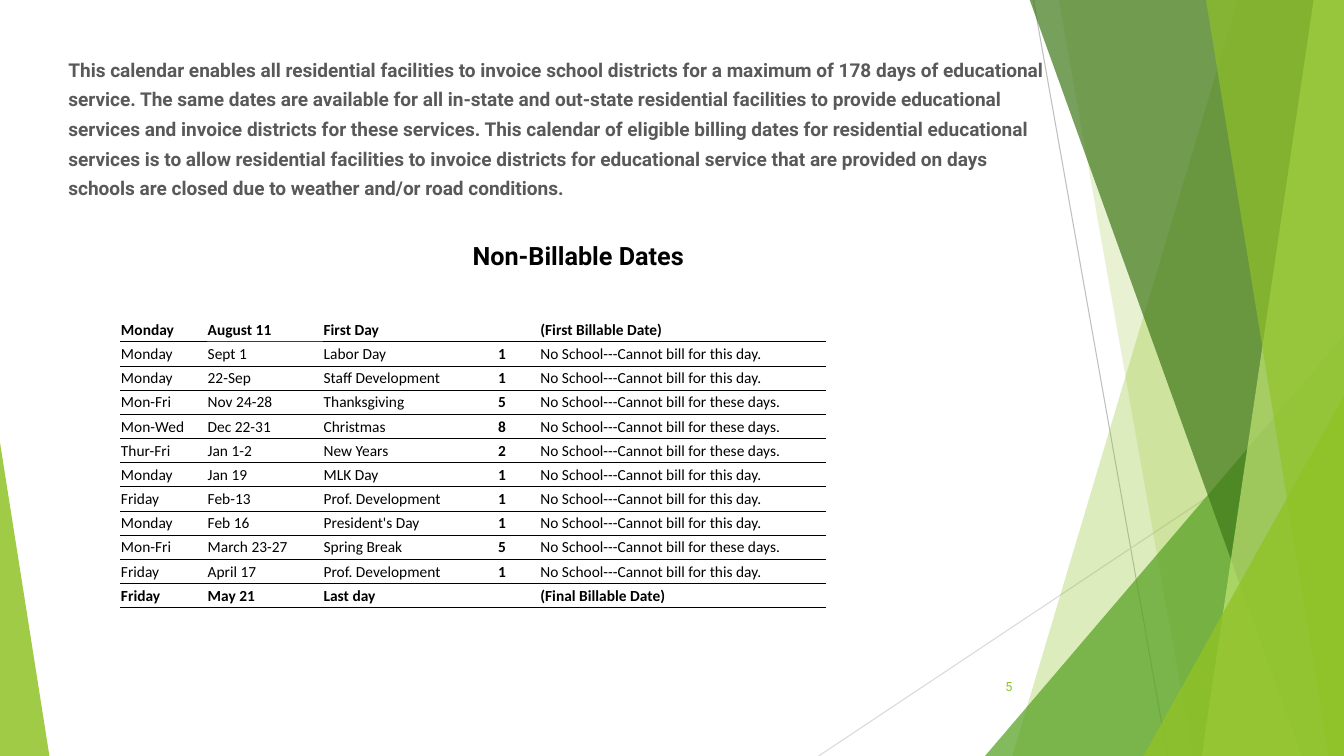
from lxml import etree
from pptx import Presentation
from pptx.dml.color import RGBColor
from pptx.enum.shapes import MSO_CONNECTOR, MSO_SHAPE
from pptx.enum.text import MSO_ANCHOR, PP_ALIGN
from pptx.oxml.ns import qn
from pptx.util import Inches, Pt

STRAIGHT = MSO_CONNECTOR.STRAIGHT
TRIANGLE = MSO_SHAPE.ISOSCELES_TRIANGLE
TOP, MIDDLE = MSO_ANCHOR.TOP, MSO_ANCHOR.MIDDLE
LEFT, CENTER, RIGHT = PP_ALIGN.LEFT, PP_ALIGN.CENTER, PP_ALIGN.RIGHT

BLACK = RGBColor(0x00, 0x00, 0x00)
WHITE = RGBColor(0xFF, 0xFF, 0xFF)
GRAY = RGBColor(0x59, 0x59, 0x59)
LINE_GRAY = RGBColor(0xBF, 0xBF, 0xBF)
PALE_GRAY = RGBColor(0xD9, 0xD9, 0xD9)
LIME = RGBColor(0x90, 0xC2, 0x26)
PALE_LIME = RGBColor(0xC0, 0xE4, 0x74)
GREEN = RGBColor(0x54, 0xA0, 0x21)
DARK_GREEN = RGBColor(0x3F, 0x78, 0x19)
VIOLET = RGBColor(0x66, 0x00, 0xFF)

SLIDE_WIDTH, SLIDE_HEIGHT = 13.33, 7.5
PANEL_TOP = -0.01


def write_text(text_frame, text, alignment, size, font_name, color, bold):
    paragraph = text_frame.paragraphs[0]
    paragraph.alignment = alignment
    run = paragraph.add_run()
    run.text = text
    font_format = {"size": Pt(size), "name": font_name, "bold": bold}
    for name, value in font_format.items():
        setattr(run.font, name, value)
    run.font.color.rgb = color
    return paragraph


def add_border(cell, side, color):
    properties = cell._tc.get_or_add_tcPr()
    line = etree.SubElement(properties, qn(f"a:{side}"), w=str(Pt(0.5)))
    if color is None:
        etree.SubElement(line, qn("a:noFill"))
    else:
        fill = etree.SubElement(line, qn("a:solidFill"))
        etree.SubElement(fill, qn("a:srgbClr"), val=str(color))


presentation = Presentation()
presentation.slide_width = Inches(SLIDE_WIDTH)
presentation.slide_height = Inches(SLIDE_HEIGHT)
slide = presentation.slides.add_slide(presentation.slide_layouts[6])
shapes = slide.shapes

thin_lines = [
    ((10.25, 0, 11.58, SLIDE_HEIGHT), LINE_GRAY),
    ((SLIDE_WIDTH, 4.03, 8.12, SLIDE_HEIGHT), PALE_GRAY),
]
for ends, color in thin_lines:
    connector = shapes.add_connector(STRAIGHT, *[Inches(end) for end in ends])
    connector.line.color.rgb = color
    connector.line.width = Pt(0.75)
    etree.SubElement(connector._element.spPr, qn("a:effectLst"))

# Two numbers: top and bottom of a panel's left edge. Four: a triangle's box.
panels = [
    ((12.28, 10.04), LIME, 30),
    ((10.5, 11.83), LIME, 20),
    ((9.77, 3.33, 3.56, 4.17), GREEN, 72),
    ((10.21, 12.91), DARK_GREEN, 70),
    ((13.03, 11.92), PALE_LIME, 70),
    ((11.96, 13.18), LIME, 65),
    ((11.34, 3.93, 1.99, 3.57), LIME, 80),
    ((0, 4.39, 0.49, 3.11), LIME, 85),
]
for place, color, opacity in panels:
    if len(place) == 2:
        top_left, bottom_left = place
        corners = [
            (SLIDE_WIDTH, PANEL_TOP),
            (SLIDE_WIDTH, SLIDE_HEIGHT),
            (bottom_left, SLIDE_HEIGHT),
        ]
        builder = shapes.build_freeform(Inches(top_left), Inches(PANEL_TOP))
        builder.add_line_segments([(Inches(x), Inches(y)) for x, y in corners])
        panel = builder.convert_to_shape()
    else:
        panel = shapes.add_shape(TRIANGLE, *[Inches(value) for value in place])
        panel.adjustments[0] = 0 if place[0] == 0 else 1
    panel.shadow.inherit = False
    panel.fill.solid()
    panel.fill.fore_color.rgb = color
    panel.line.fill.background()
    color_element = panel._element.spPr.find(qn("a:solidFill"))[0]
    etree.SubElement(color_element, qn("a:alpha"), val=str(opacity * 1000))

introduction = (
    "This calendar enables all residential facilities to invoice school districts "
    "for a maximum of 178 days of educational service. The same dates are available "
    "for all in-state and out-state residential facilities to provide educational "
    "services and invoice districts for these services. This calendar of eligible "
    "billing dates for residential educational services is to allow residential "
    "facilities to invoice districts for educational service that are provided on "
    "days schools are closed due to weather and/or road conditions."
)
text_boxes = [
    ((9.39, 6.61, 0.75, 0.4), "5", MIDDLE, RIGHT, 9, LIME, False, {}),
    ((0.58, 0.46, 10.01, 1.7), introduction, TOP, LEFT, 13.6, GRAY, True,
     {"line_spacing": 1.3, "space_before": Pt(12)}),
    ((2.01, 2.33, 7.45, 0.4), "Non-Billable Dates", MIDDLE, CENTER, 18, BLACK, True, {}),
]
for place, text, anchor, alignment, size, color, bold, spacing in text_boxes:
    text_box = shapes.add_textbox(*[Inches(value) for value in place])
    text_box.text_frame.word_wrap = True
    text_box.text_frame.vertical_anchor = anchor
    paragraph = write_text(text_box.text_frame, text, alignment, size, "Roboto", color, bold)
    for name, value in spacing.items():
        setattr(paragraph, name, value)

ONE_DAY = "No School---Cannot bill for this day."
MORE_DAYS = "No School---Cannot bill for these days."
calendar_rows = [
    ("", "", "", "", ""),
    ("Monday", "August 11", "First Day", "", "(First Billable Date)"),
    ("Monday", "Sept 1", "Labor Day", "1", ONE_DAY),
    ("Monday", "22-Sep", "Staff Development", "1", ONE_DAY),
    ("Mon-Fri", "Nov 24-28", "Thanksgiving", "5", MORE_DAYS),
    ("Mon-Wed", "Dec 22-31", "Christmas", "8", MORE_DAYS),
    ("Thur-Fri", "Jan 1-2", "New Years", "2", MORE_DAYS),
    ("Monday", "Jan 19", "MLK Day", "1", ONE_DAY),
    ("Friday", "Feb-13", "Prof. Development", "1", ONE_DAY),
    ("Monday", "Feb 16", "President's Day", "1", ONE_DAY),
    ("Mon-Fri", "March 23-27", "Spring Break", "5", MORE_DAYS),
    ("Friday", "April 17", "Prof. Development", "1", ONE_DAY),
    ("Friday", "May 21", "Last day", "", "(Final Billable Date)"),
]
column_widths = [0.86, 1.15, 1.41, 0.74, 1.23, 1.61, 1.49]
COUNT_COLUMN, NOTE_COLUMN, LAST_COLUMN = 3, 4, 6
FIRST_DAY, LAST_DAY = 1, len(calendar_rows) - 1
cell_format = {
    "margin_left": Inches(0.01),
    "margin_right": Inches(0.01),
    "margin_top": Inches(0.01),
    "margin_bottom": 0,
    "vertical_anchor": MIDDLE,
}

table = shapes.add_table(
    len(calendar_rows), len(column_widths),
    Inches(1.19), Inches(2.91), Inches(8.5), Inches(3.12),
).table
table.first_row = False
table.horz_banding = False
for column, width in zip(table.columns, column_widths):
    column.width = Inches(width)

for row_index, texts in enumerate(calendar_rows):
    table.rows[row_index].height = Inches(0.24)
    is_closed_day = FIRST_DAY < row_index < LAST_DAY
    for column_index in range(len(column_widths)):
        cell = table.cell(row_index, column_index)
        for name, value in cell_format.items():
            setattr(cell, name, value)

        is_ruled = column_index < LAST_COLUMN
        top = BLACK if is_ruled and row_index > FIRST_DAY else None
        bottom = BLACK if is_ruled and row_index >= FIRST_DAY else None
        if column_index == 1 and row_index == FIRST_DAY:
            bottom = VIOLET
        if column_index == 1 and row_index == FIRST_DAY + 1:
            top = VIOLET
        for side, color in (("lnL", None), ("lnR", None), ("lnT", top), ("lnB", bottom)):
            add_border(cell, side, color)

        if is_closed_day and is_ruled:
            cell.fill.solid()
            cell.fill.fore_color.rgb = WHITE
        else:
            cell.fill.background()

        text = texts[column_index] if column_index < len(texts) else ""
        if text:
            is_count = column_index == COUNT_COLUMN
            alignment = CENTER if is_count else LEFT
            bold = is_count or not is_closed_day
            write_text(cell.text_frame, text, alignment, 11, "Calibri", BLACK, bold)
        else:
            cell.text_frame.paragraphs[0].font.size = Pt(11)
    if row_index >= FIRST_DAY:
        table.cell(row_index, NOTE_COLUMN).merge(table.cell(row_index, NOTE_COLUMN + 1))

presentation.save("out.pptx")
